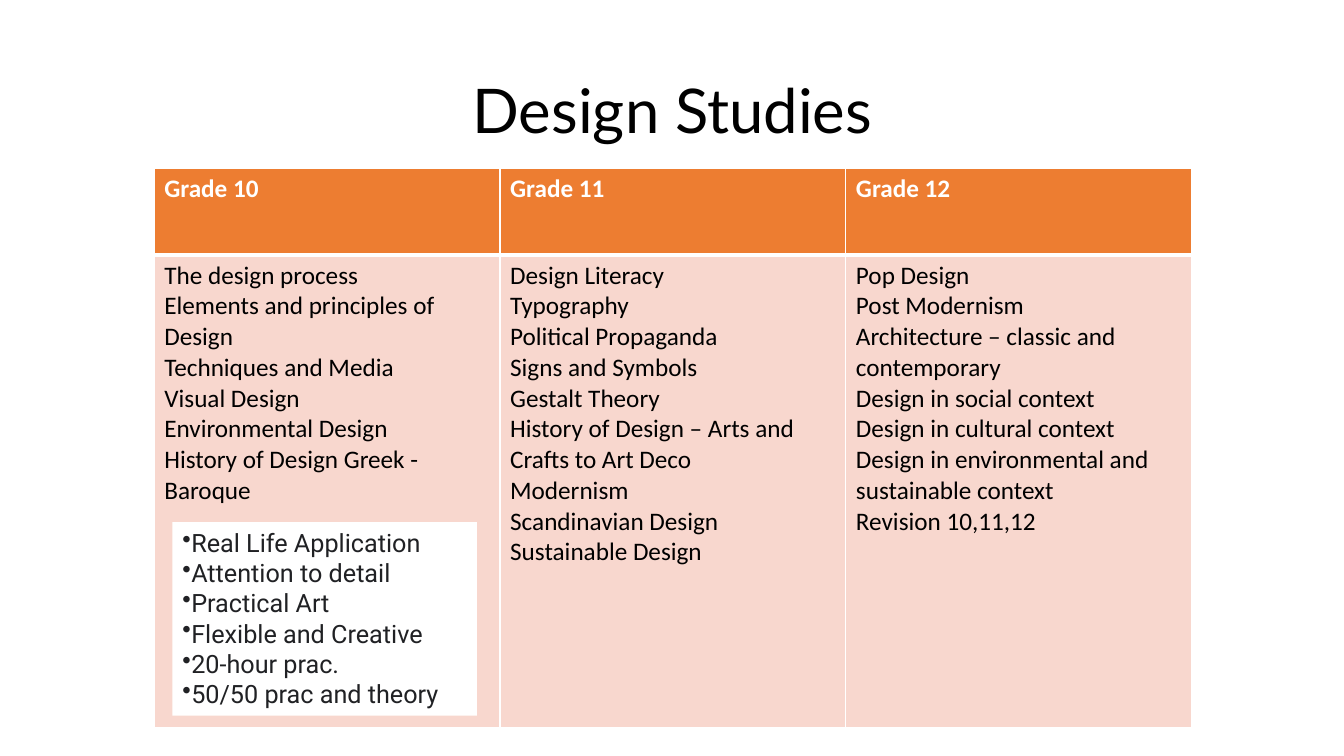
from lxml.etree import SubElement
from pptx import Presentation
from pptx.dml.color import RGBColor
from pptx.enum.shapes import MSO_SHAPE
from pptx.enum.text import MSO_ANCHOR, PP_ALIGN
from pptx.oxml.ns import qn
from pptx.util import Inches, Pt

GRADES = {
    "Grade 10": [
        "The design process",
        "Elements and principles of Design",
        "Techniques and Media",
        "Visual Design",
        "Environmental Design",
        "History of Design Greek - Baroque",
    ],
    "Grade 11": [
        "Design Literacy",
        "Typography",
        "Political Propaganda",
        "Signs and Symbols",
        "Gestalt Theory",
        "History of Design – Arts and Crafts to Art Deco",
        "Modernism",
        "Scandinavian Design",
        "Sustainable Design",
    ],
    "Grade 12": [
        "Pop Design",
        "Post Modernism",
        "Architecture – classic and contemporary",
        "Design in social context",
        "Design in cultural context",
        "Design in environmental and sustainable context",
        "Revision 10,11,12",
    ],
}
HIGHLIGHTS = [
    "Real Life Application",
    "Attention to detail",
    "Practical Art",
    "Flexible and Creative",
    "20-hour prac.",
    "50/50 prac and theory",
]


def color(value):
    """Turn a hex string into a colour."""
    return RGBColor.from_string(value)


def write_lines(frame, lines, font_name, size, text_color, bold=False, align=PP_ALIGN.LEFT):
    """Fill a text frame with one formatted paragraph per line."""
    frame.text = "\n".join(lines)
    for paragraph in frame.paragraphs:
        paragraph.alignment = align
        paragraph.font.name = font_name
        paragraph.font.size = Pt(size)
        paragraph.font.bold = bold
        paragraph.font.color.rgb = color(text_color)


def add_title(slide, text):
    """Place and format the slide title."""
    title = slide.shapes.title
    title.left, title.top = Inches(0.92), Inches(0.4)
    title.width, title.height = Inches(11.5), Inches(1.45)
    title.text_frame.vertical_anchor = MSO_ANCHOR.MIDDLE
    write_lines(title.text_frame, [text], "Lato", 44, "000000", align=PP_ALIGN.CENTER)
    title.text_frame.paragraphs[0].line_spacing = 0.9


def set_borders(cell, top, bottom):
    """Draw white cell borders, one point wide at the sides."""
    properties = cell._tc.get_or_add_tcPr()
    for side, width in (("L", 1), ("R", 1), ("T", top), ("B", bottom)):
        line = SubElement(properties, qn(f"a:ln{side}"), w=str(Pt(width)))
        fill = SubElement(line, qn("a:solidFill"))
        SubElement(fill, qn("a:srgbClr"), val="FFFFFF")


def format_cell(cell, lines, fill, text_color, bold, top, bottom):
    """Write a table cell with its fill and borders."""
    set_borders(cell, top, bottom)
    cell.fill.solid()
    cell.fill.fore_color.rgb = color(fill)
    write_lines(cell.text_frame, lines, "Calibri", 18, text_color, bold)


def add_grade_table(slide, grades):
    """Add a table with one column of topics per grade."""
    frame = slide.shapes.add_table(
        2, len(grades), Inches(1.53), Inches(1.67), Inches(10.29), Inches(5.55))
    table = frame.table
    table.rows[0].height, table.rows[1].height = Inches(0.86), Inches(4.69)
    for index, (grade, topics) in enumerate(grades.items()):
        table.columns[index].width = Inches(3.43)
        format_cell(table.cell(0, index), [grade], "ED7D31", "FFFFFF", True, 1, 3)
        format_cell(table.cell(1, index), topics, "F8D7CE", "000000", False, 3, 1)


def add_bullet_box(slide, lines):
    """Add a white box with a bulleted list."""
    box = slide.shapes.add_shape(
        MSO_SHAPE.RECTANGLE, Inches(1.71), Inches(5.18), Inches(3.02), Inches(1.92))
    box.shadow.inherit = False
    box.fill.solid()
    box.fill.fore_color.rgb = color("FFFFFF")
    box.line.fill.background()
    box.text_frame.word_wrap = True
    box.text_frame.vertical_anchor = MSO_ANCHOR.TOP
    write_lines(box.text_frame, lines, "Roboto", 18, "202124")
    for paragraph in box.text_frame.paragraphs:
        properties = paragraph._p.get_or_add_pPr()
        bullet = properties.makeelement(qn("a:buChar"), {"char": "•"})
        properties.insert_element_before(bullet, "a:tabLst", "a:defRPr", "a:extLst")


def main():
    """Build and save the presentation."""
    presentation = Presentation()
    presentation.slide_width, presentation.slide_height = Inches(13.33), Inches(7.5)
    slide = presentation.slides.add_slide(presentation.slide_layouts[5])
    add_title(slide, "Design Studies")
    add_grade_table(slide, GRADES)
    add_bullet_box(slide, HIGHLIGHTS)
    presentation.save("out.pptx")


if __name__ == "__main__":
    main()
